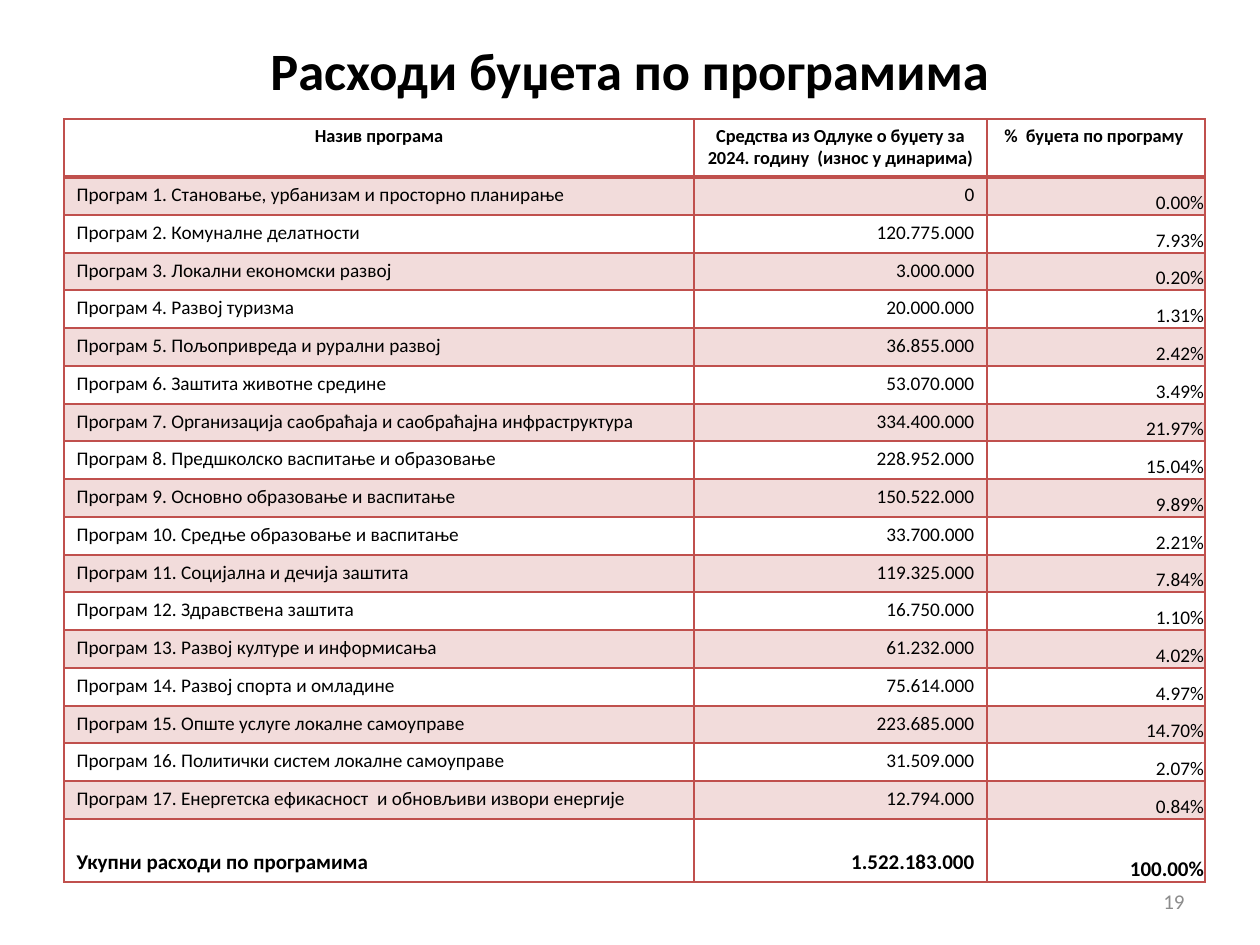
from dataclasses import dataclass

from lxml.etree import SubElement
from pptx import Presentation
from pptx.dml.color import RGBColor
from pptx.enum.text import MSO_ANCHOR, PP_ALIGN
from pptx.oxml import parse_xml
from pptx.oxml.ns import nsdecls, qn
from pptx.util import Emu, Pt

FONT = "Calibri"
COLORS = {"text": "000000", "accent": "C0504D", "number": "8C8C8C"}
COLUMN_WIDTHS = [630, 293, 218]
HEADER_HEIGHT, BODY_HEIGHT, TOTAL_HEIGHT = 58, 642, 63
BAND_OPACITY = 20000


@dataclass
class Program:
    name: str
    amount: str
    share: str


HEADERS = Program(
    "Назив програма",
    "Средства из Одлуке о буџету за 2024. годину  (износ у динарима)",
    "%  буџета по програму ",
)
PROGRAMS = [
    Program("Програм 1. Становање, урбанизам и просторно планирање", "0", "0.00%"),
    Program("Програм 2. Комуналне делатности", "120.775.000", "7.93%"),
    Program("Програм 3. Локални економски развој", "3.000.000", "0.20%"),
    Program("Програм 4. Развој туризма", "20.000.000", "1.31%"),
    Program("Програм 5. Пољопривреда и рурални развој", "36.855.000", "2.42%"),
    Program("Програм 6. Заштита животне средине", "53.070.000", "3.49%"),
    Program("Програм 7. Организација саобраћаја и саобраћајна инфраструктура", "334.400.000", "21.97%"),
    Program("Програм 8. Предшколско васпитање и образовање", "228.952.000", "15.04%"),
    Program("Програм 9. Основно образовање и васпитање", "150.522.000", "9.89%"),
    Program("Програм 10. Средње образовање и васпитање", "33.700.000", "2.21%"),
    Program("Програм 11. Социјална и дечија заштита", "119.325.000", "7.84%"),
    Program("Програм 12. Здравствена заштита", "16.750.000", "1.10%"),
    Program("Програм 13. Развој културе и информисања", "61.232.000", "4.02%"),
    Program("Програм 14. Развој спорта и омладине", "75.614.000", "4.97%"),
    Program("Програм 15. Опште услуге локалне самоуправе", "223.685.000", "14.70%"),
    Program("Програм 16. Политички систем локалне самоуправе", "31.509.000", "2.07%"),
    Program("Програм 17. Енергетска ефикасност  и обновљиви извори енергије", "12.794.000", "0.84%"),
]
TOTAL = Program("Укупни расходи по програмима", "1.522.183.000", "100.00%")


def px(length: int) -> Emu:
    return Emu(round(length * 914400 / 126))


def write_text(text_frame, text: str, size: float, alignment, color: str = "text", bold: bool = False) -> None:
    text_frame.text = text
    paragraph = text_frame.paragraphs[0]
    paragraph.alignment = alignment
    for run in paragraph.runs:
        run.font.name = FONT
        run.font.size = Pt(size)
        run.font.bold = bold
        run.font.color.rgb = RGBColor.from_string(COLORS[color])


def set_borders(cell, top: int = 1, bottom: int = 1) -> None:
    properties = cell._tc.get_or_add_tcPr()
    widths = {"lnL": 1, "lnR": 1, "lnT": top, "lnB": bottom}
    for position, (side, width) in enumerate(widths.items()):
        properties.insert(position, parse_xml(
            f'<a:{side} {nsdecls("a")} w="{Pt(width)}"><a:solidFill>'
            f'<a:srgbClr val="{COLORS["accent"]}"/></a:solidFill></a:{side}>'
        ))


def fill_cell(cell, banded: bool) -> None:
    if not banded:
        cell.fill.background()
        return
    cell.fill.solid()
    cell.fill.fore_color.rgb = RGBColor.from_string(COLORS["accent"])
    color = cell._tc.tcPr.find(".//" + qn("a:srgbClr"))
    SubElement(color, qn("a:alpha")).set("val", str(BAND_OPACITY))


def draw_row(table, row: int, program: Program) -> None:
    is_header = program is HEADERS
    is_total = program is TOTAL
    size = 10.5 if is_header else 12 if is_total else 11
    banded = not is_header and not is_total and row % 2 == 1
    alignments = [PP_ALIGN.CENTER] * 3 if is_header else [PP_ALIGN.LEFT, PP_ALIGN.RIGHT, PP_ALIGN.RIGHT]
    texts = [program.name, program.amount, program.share]
    for column, (text, alignment) in enumerate(zip(texts, alignments)):
        cell = table.cell(row, column)
        write_text(cell.text_frame, text, size, alignment, bold=is_header or is_total)
        is_share = column == 2 and not is_header
        cell.vertical_anchor = MSO_ANCHOR.BOTTOM if is_share or is_total else MSO_ANCHOR.TOP
        if is_share:
            cell.margin_left = cell.margin_right = cell.margin_top = px(1)
            cell.margin_bottom = 0
        fill_cell(cell, banded)
        set_borders(cell, top=2 if row == 1 else 1, bottom=2 if is_header else 1)


def draw_table(slide) -> None:
    rows = [HEADERS, *PROGRAMS, TOTAL]
    edges = [round(BODY_HEIGHT * index / len(PROGRAMS)) for index in range(len(PROGRAMS) + 1)]
    body_heights = [end - start for start, end in zip(edges, edges[1:])]
    heights = [HEADER_HEIGHT, *body_heights, TOTAL_HEIGHT]
    table = slide.shapes.add_table(
        len(rows), len(COLUMN_WIDTHS), px(64), px(119), px(sum(COLUMN_WIDTHS)), px(sum(heights))
    ).table
    table.horz_banding = False
    table.first_row = False
    for column, width in zip(table.columns, COLUMN_WIDTHS):
        column.width = px(width)
    for index, (program, height) in enumerate(zip(rows, heights)):
        table.rows[index].height = px(height)
        draw_row(table, index, program)


def main() -> None:
    presentation = Presentation()
    presentation.slide_width = px(1260)
    presentation.slide_height = px(945)
    slide = presentation.slides.add_slide(presentation.slide_layouts[5])

    title = slide.shapes.title
    title.left, title.top, title.width, title.height = px(93), px(16), px(1074), px(107)
    write_text(title.text_frame, "Расходи буџета по програмима", 30, PP_ALIGN.CENTER, bold=True)
    title.text_frame.vertical_anchor = MSO_ANCHOR.MIDDLE

    draw_table(slide)

    page_number = slide.shapes.add_textbox(px(903), px(876), px(294), px(50))
    page_number.text_frame.word_wrap = True
    page_number.text_frame.vertical_anchor = MSO_ANCHOR.MIDDLE
    write_text(page_number.text_frame, "19", 12, PP_ALIGN.RIGHT, "number")

    presentation.save("out.pptx")


if __name__ == "__main__":
    main()
